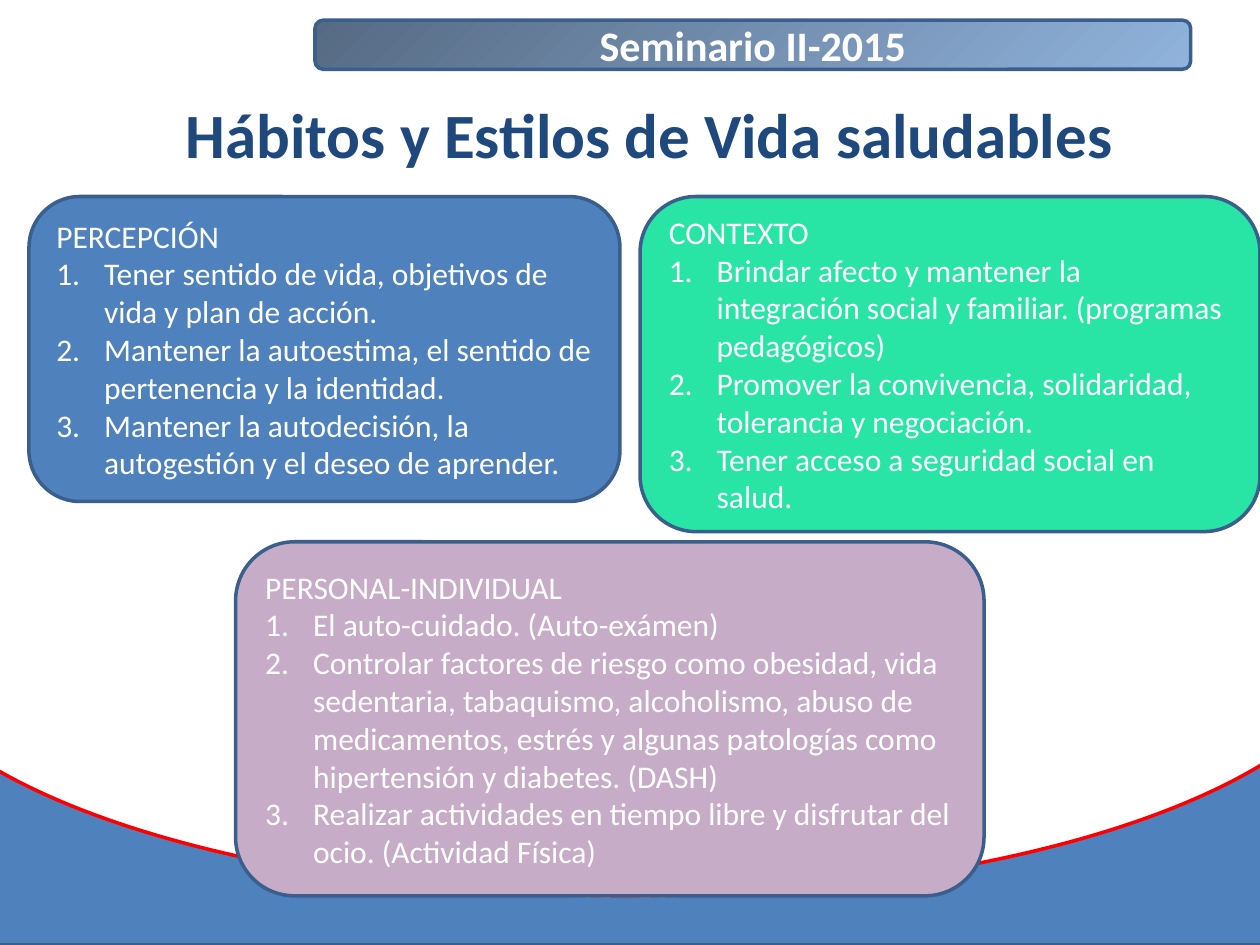
from lxml.etree import SubElement
from pptx import Presentation
from pptx.dml.color import RGBColor
from pptx.enum.shapes import MSO_SHAPE as Kind
from pptx.enum.text import MSO_ANCHOR, PP_ALIGN
from pptx.oxml.ns import qn
from pptx.util import Inches, Pt

HUES = {"blue": "4F81BD", "edge": "3A5F8C", "white": "FFFFFF", "red": "FF0000",
        "green": "28E4A5", "mauve": "C7ACC8", "navy": "1F497D",
        "dark": "566A83", "light": "90B3DC"}
BANNER = "Seminario II-2015"
TITLE = "Hábitos y Estilos de Vida saludables"

# kind, (left, top, width, height), fill, line
CURVE = [
    (Kind.RECTANGLE, (-0.94, 3.83, 12.11, 3.67), "blue", "edge"),
    (Kind.OVAL, (-1.09, 2.42, 12.11, 4.69), "white", "white"),
    (Kind.OVAL, (-0.94, 2.81, 11.8, 4.3), None, "red"),
    (Kind.RECTANGLE, (-0.94, 0, 12.11, 5.86), "white", "white"),
]
# heading, place, fill, numbered items
CARDS = [
    ("PERCEPCIÓN", (0.23, 1.56, 4.69, 2.42), "blue", [
        "Tener sentido de vida, objetivos de vida y plan de acción.",
        "Mantener la autoestima, el sentido de pertenencia y la identidad.",
        "Mantener la autodecisión, la autogestión y el deseo de aprender."]),
    ("CONTEXTO", (5.08, 1.56, 4.92, 2.66), "green", [
        "Brindar afecto y mantener la integración social y familiar. "
        "(programas pedagógicos)",
        "Promover la convivencia, solidaridad, tolerancia y negociación.",
        "Tener acceso a seguridad social en salud."]),
    ("PERSONAL-INDIVIDUAL", (1.87, 4.3, 5.94, 2.81), "mauve", [
        "El auto-cuidado. (Auto-exámen)",
        "Controlar factores de riesgo como obesidad, vida sedentaria, "
        "tabaquismo, alcoholismo, abuso de medicamentos, estrés y algunas "
        "patologías como hipertensión y diabetes. (DASH)",
        "Realizar actividades en tiempo libre y disfrutar del ocio. "
        "(Actividad Física)"]),
]
FONTS = {
    "banner": {"name": "Calibri", "size": Pt(24), "bold": True},
    "title": {"name": "Calibri", "size": Pt(36), "bold": True},
    "card": {"name": "Calibri", "size": Pt(18), "bold": False},
}
INDENT = Inches(0.38)


def tint(name):
    return RGBColor.from_string(HUES[name])


def add_box(slide, kind, place, fill, line):
    box = slide.shapes.add_shape(kind, *map(Inches, place))
    box.shadow.inherit = False
    if fill:
        box.fill.solid()
        box.fill.fore_color.rgb = tint(fill)
    else:
        box.fill.background()
    box.line.color.rgb = tint(line)
    box.line.width = Pt(2)
    return box


def style(para, kind, hue, align):
    para.alignment = align
    for key, value in FONTS[kind].items():
        setattr(para.font, key, value)
    para.font.color.rgb = tint(hue)


def set_line(shape, text, kind, hue):
    """Put one centred line of text in the shape."""
    frame = shape.text_frame
    frame.text = text
    frame.word_wrap = True
    frame.vertical_anchor = MSO_ANCHOR.MIDDLE
    style(frame.paragraphs[0], kind, hue, PP_ALIGN.CENTER)


def number(para):
    """Give the paragraph an automatic number and a hanging indent."""
    props = para._p.get_or_add_pPr()
    props.set("marL", str(INDENT))
    props.set("indent", str(-INDENT))
    SubElement(props, qn("a:buFont"), typeface="+mj-lt")
    SubElement(props, qn("a:buAutoNum"), type="arabicPeriod")


def add_card(slide, head, place, fill, items):
    box = add_box(slide, Kind.ROUNDED_RECTANGLE, place, fill, "edge")
    frame = box.text_frame
    frame.word_wrap = True
    frame.vertical_anchor = MSO_ANCHOR.MIDDLE
    frame.text = "\n".join([head, *items])
    for rank, para in enumerate(frame.paragraphs):
        if rank:
            number(para)
        style(para, "card", "white", PP_ALIGN.LEFT)


def add_banner(slide):
    box = add_box(slide, Kind.ROUNDED_RECTANGLE, (2.5, 0.16, 6.95, 0.39),
                  "dark", "edge")
    box.fill.gradient()
    box.fill.gradient_angle = -45 % 360
    for stop, hue, spot in zip(box.fill.gradient_stops, ("dark", "light"), (0, 1)):
        stop.color.rgb = tint(hue)
        stop.position = spot
    set_line(box, BANNER, "banner", "white")


def add_title(slide):
    title = slide.shapes.title
    places = map(Inches, (1.17, 0.55, 7.97, 1.02))
    for side, value in zip(("left", "top", "width", "height"), places):
        setattr(title, side, value)
    set_line(title, TITLE, "title", "navy")
    # Bring the title in front of the white backdrop
    title.element.getparent().append(title.element)


def main():
    deck = Presentation()
    deck.slide_width, deck.slide_height = Inches(10), Inches(7.5)
    slide = deck.slides.add_slide(deck.slide_layouts[5])
    for part in CURVE:
        add_box(slide, *part)
    add_banner(slide)
    add_title(slide)
    for card in CARDS:
        add_card(slide, *card)
    deck.save("out.pptx")


if __name__ == "__main__":
    main()
